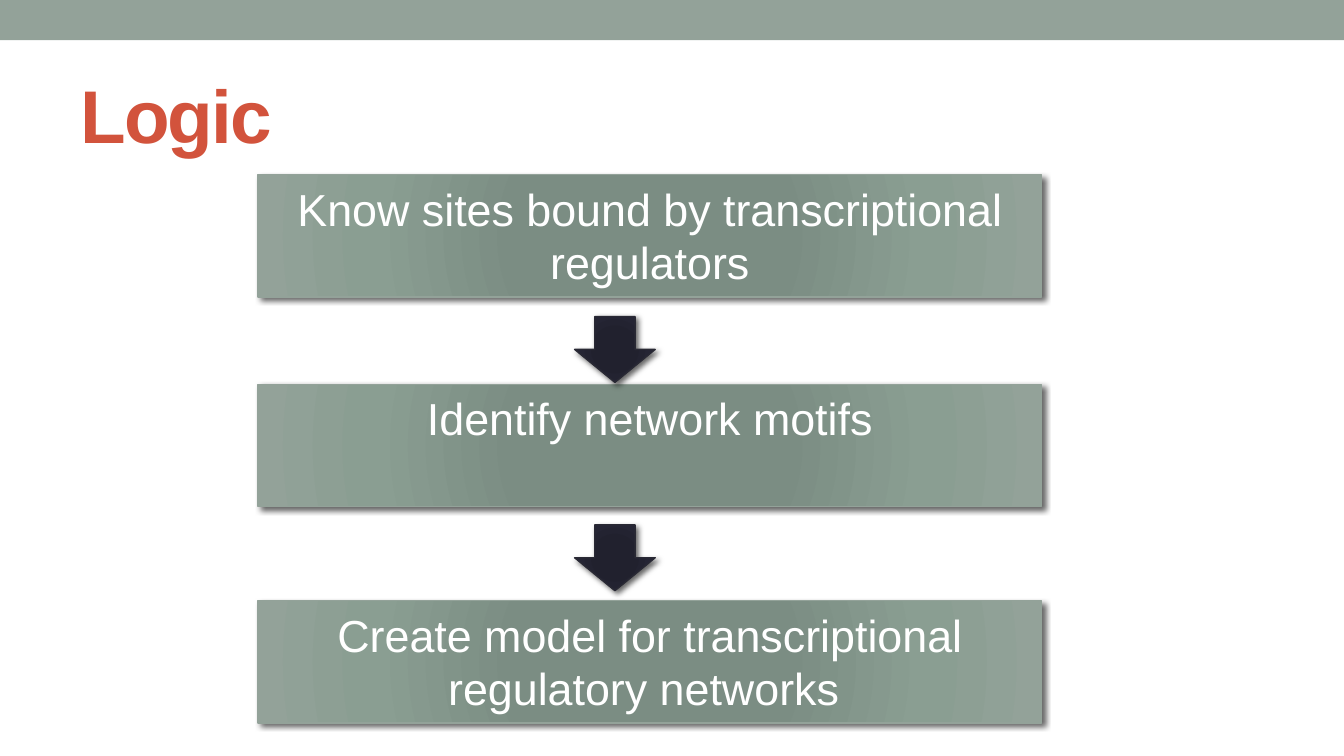
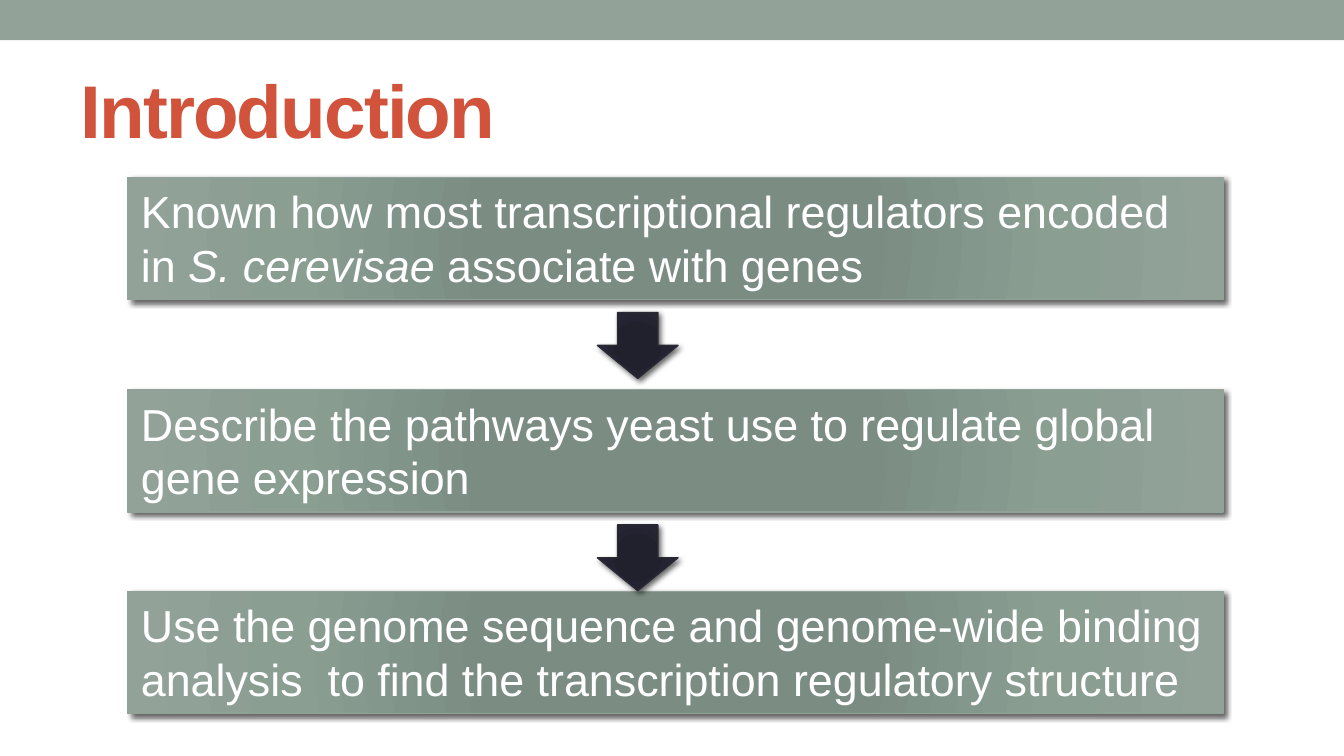
from dataclasses import dataclass

from lxml.etree import SubElement as add_element
from pptx import Presentation
from pptx.dml.color import RGBColor
from pptx.enum.shapes import MSO_SHAPE as Preset
from pptx.enum.text import MSO_ANCHOR as Anchor, MSO_AUTO_SIZE as AutoSize, PP_ALIGN as Align
from pptx.oxml.ns import qn
from pptx.util import Emu, Pt

PX_PER_INCH = 200
FONT = "Arial"
TITLE_ONLY = 5
COLORS = {
    "band": "93A299",
    "title": "D2533C",
    "text": "FFFFFF",
    "arrow_edge": "292934",
    "shadow": "000000",
}
STEP_GRADIENT = {0: "7B8E82", 34: "7B8D83", 70: "8A9E92", 100: COLORS["band"]}
ARROW_GRADIENT = {0: "21212F", 34: "21212E", 70: "252534", 100: COLORS["arrow_edge"]}

SLIDE_WIDTH, SLIDE_HEIGHT = 2000, 1125
BAND_HEIGHT = 60
TITLE_LEFT, TITLE_WIDTH, TITLE_HEIGHT = 100, 1800, 162
STEP_HEIGHT = 182
ARROW_LENGTH, ARROW_BREADTH = 98, 120


@dataclass(frozen=True)
class Span:
    text: str
    italic: bool = False


@dataclass(frozen=True)
class Step:
    top: int
    spans: tuple[Span, ...]


@dataclass(frozen=True)
class FlowPage:
    title: str
    title_top: int
    left: int
    width: int
    align: Align
    steps: tuple[Step, ...]
    arrow_left: int
    arrow_tops: tuple[int, ...]


PAGES = (
    FlowPage("Logic", 88, 384, 1166, Align.CENTER, (
        Step(260, (Span("Know sites bound by transcriptional regulators"),)),
        Step(572, (Span("Identify network motifs"),)),
        Step(894, (Span("Create model for transcriptional regulatory networks "),)),
    ), 866, (460, 770)),
    FlowPage("Introduction", 80, 190, 1630, Align.LEFT, (
        Step(264, (
            Span("Known how most transcriptional regulators encoded in "),
            Span("S. cerevisae ", italic=True),
            Span("associate with genes"),
        )),
        Step(580, (Span("Describe the pathways yeast use to regulate global gene expression"),)),
        Step(880, (Span("Use the genome sequence and genome-wide binding analysis  "
                        "to find the transcription regulatory structure"),)),
    ), 900, (454, 770)),
)


def px(length: int) -> Emu:
    return Emu(length * 914400 // PX_PER_INCH)


def add_span(para, text: str, *, size: int, color: str, bold: bool = False,
             italic: bool = False, spacing: int = 0) -> None:
    span = para.add_run()
    span.text = text
    font = span.font
    font.name, font.size, font.bold, font.italic = FONT, Pt(size), bold, italic
    font.color.rgb = RGBColor.from_string(color)
    if spacing:
        font._element.set("spc", str(spacing * 100))


def add_color(parent, color: str):
    return add_element(parent, qn("a:srgbClr"), val=color)


def add_preset(page, preset: Preset, left: int, top: int, width: int, height: int):
    shape = page.shapes.add_shape(preset, px(left), px(top), px(width), px(height))
    shape.shadow.inherit = False
    return shape


def fill_radial(shape, gradient: dict[int, str]) -> None:
    properties = shape.element.spPr
    fill = add_element(properties, qn("a:gradFill"), rotWithShape="1")
    stops = add_element(fill, qn("a:gsLst"))
    for percent, color in gradient.items():
        add_color(add_element(stops, qn("a:gs"), pos=str(percent * 1000)), color)
    radial = add_element(fill, qn("a:path"), path="circle")
    add_element(radial, qn("a:fillToRect"), l="100000", t="100000", r="100000", b="100000")
    properties.find(qn("a:prstGeom")).addnext(fill)


def add_shadow(shape) -> None:
    effects = shape.element.spPr.find(qn("a:effectLst"))
    shadow = add_element(effects, qn("a:outerShdw"), blurRad=str(Pt(3)), dist=str(Pt(2)),
                         dir=str(45 * 60000), algn="tl", rotWithShape="0")
    add_element(add_color(shadow, COLORS["shadow"]), qn("a:alpha"), val="60000")


def add_raised(page, preset: Preset, left: int, top: int, width: int, height: int,
               gradient: dict[int, str], edge: str):
    shape = add_preset(page, preset, left, top, width, height)
    fill_radial(shape, gradient)
    shape.line.color.rgb = RGBColor.from_string(edge)
    shape.line.width = Pt(0.75)
    add_shadow(shape)
    return shape


def add_master_band(deck, page) -> None:
    band = add_preset(page, Preset.RECTANGLE, 0, 0, SLIDE_WIDTH, BAND_HEIGHT)
    band.fill.solid()
    band.fill.fore_color.rgb = RGBColor.from_string(COLORS["band"])
    band.line.fill.background()
    band.element.nvSpPr.cNvPr.set("id", "20")
    deck.slide_master.shapes.element.insert(2, band.element)


def set_title(page, text: str, top: int) -> None:
    title = page.shapes.title
    title.left, title.top = px(TITLE_LEFT), px(top)
    title.width, title.height = px(TITLE_WIDTH), px(TITLE_HEIGHT)
    frame = title.text_frame
    frame.vertical_anchor = Anchor.MIDDLE
    para = frame.paragraphs[0]
    para.alignment = Align.LEFT
    add_span(para, text, size=40, color=COLORS["title"], bold=True, spacing=-1)


def add_step(page, step: Step, left: int, width: int, align: Align) -> None:
    box = add_raised(page, Preset.RECTANGLE, left, step.top, width, STEP_HEIGHT,
                     STEP_GRADIENT, COLORS["band"])
    frame = box.text_frame
    frame.word_wrap = True
    frame.auto_size = AutoSize.NONE
    frame.vertical_anchor = Anchor.TOP
    para = frame.paragraphs[0]
    para.alignment = align
    for span in step.spans:
        add_span(para, span.text, size=24, color=COLORS["text"], italic=span.italic)


def add_arrow(page, left: int, top: int) -> None:
    arrow = add_raised(page, Preset.RIGHT_ARROW, left, top, ARROW_LENGTH, ARROW_BREADTH,
                       ARROW_GRADIENT, COLORS["arrow_edge"])
    arrow.rotation = 90


def add_flow_page(deck, flow: FlowPage):
    page = deck.slides.add_slide(deck.slide_layouts[TITLE_ONLY])
    set_title(page, flow.title, flow.title_top)
    for step in flow.steps:
        add_step(page, step, flow.left, flow.width, flow.align)
    for top in flow.arrow_tops:
        add_arrow(page, flow.arrow_left, top)
    return page


def main() -> None:
    deck = Presentation()
    deck.slide_width, deck.slide_height = px(SLIDE_WIDTH), px(SLIDE_HEIGHT)
    pages = [add_flow_page(deck, flow) for flow in PAGES]
    add_master_band(deck, pages[0])
    deck.save("out.pptx")


if __name__ == "__main__":
    main()
